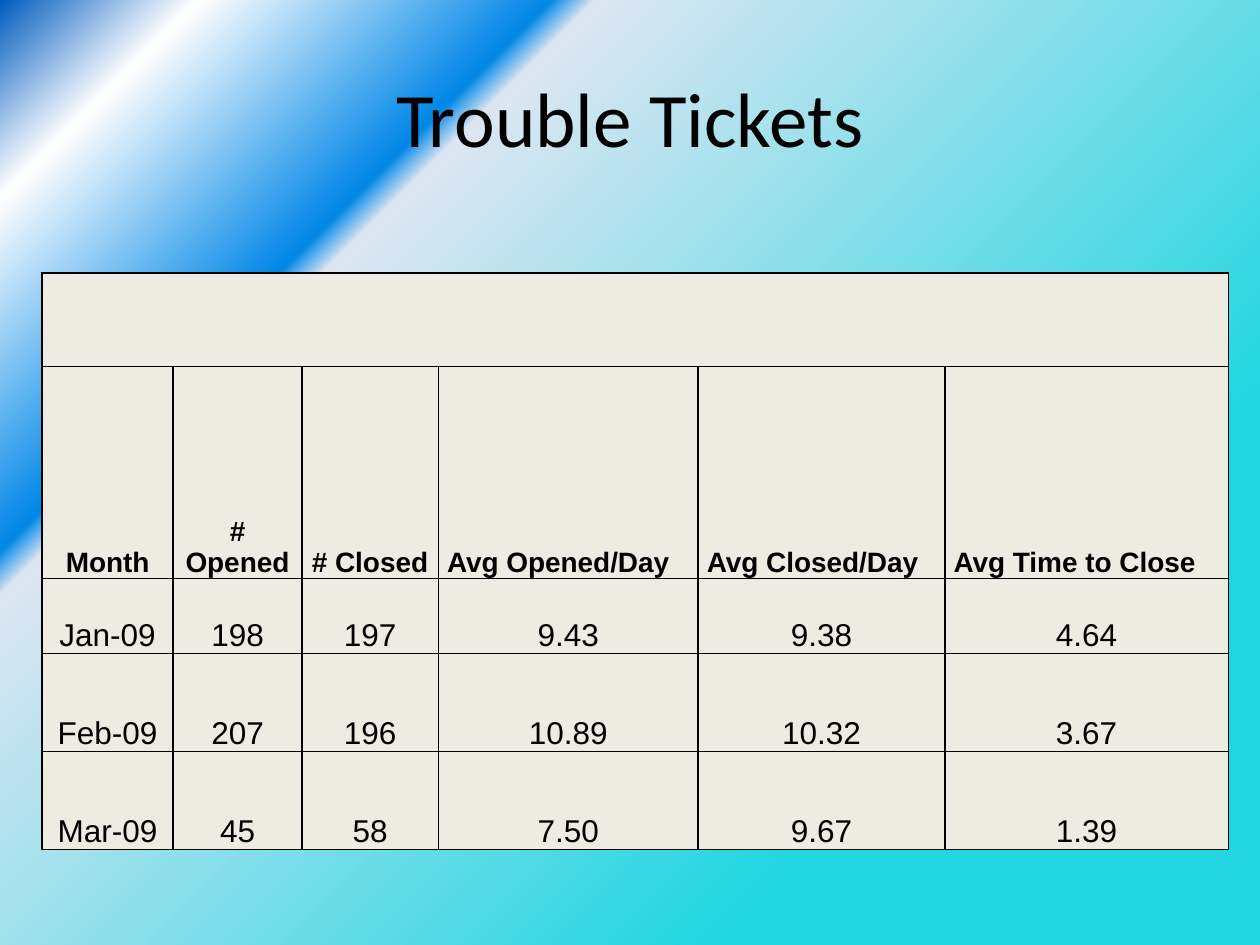
"""Build the Trouble Tickets slide with its monthly summary table."""
from lxml.etree import SubElement
from pptx import Presentation
from pptx.dml.color import RGBColor
from pptx.enum.text import MSO_ANCHOR, PP_ALIGN
from pptx.oxml.ns import qn
from pptx.util import Pt


def rgb(color):
    return RGBColor.from_string(color)


def write(tf, text, size=18, font="Arial", bold=False, align=PP_ALIGN.CENTER, color="000000"):
    p = tf.paragraphs[0]
    p.alignment = align
    r = p.add_run()
    r.text = text
    r.font.size = Pt(size)
    r.font.name = font
    r.font.bold = bold
    r.font.color.rgb = rgb(color)


prs = Presentation()
prs.slide_width, prs.slide_height = Pt(720), Pt(540)
s = prs.slides.add_slide(prs.slide_layouts[5])

s.background.fill.gradient()
grad = next(s.element.iter(qn("a:gradFill")))
for child in list(grad):
    grad.remove(child)
grad.set("rotWithShape", "1")
stops = [(25, "21D6E0"), (73, "DCE6F2"), (75, "0087E6"), (91, "FFFFFF"), (100, "005CBF")]
gs_list = SubElement(grad, qn("a:gsLst"))
for pos, color in stops:
    gs = SubElement(gs_list, qn("a:gs"), pos=str(pos * 1000))
    SubElement(gs, qn("a:srgbClr"), val=color)
path = SubElement(grad, qn("a:path"), path="circle")
SubElement(path, qn("a:fillToRect"), l="100000", t="100000")

title = s.shapes.title
title.left, title.top, title.width, title.height = Pt(36), Pt(21.6), Pt(648), Pt(90)
title.text_frame.vertical_anchor = MSO_ANCHOR.MIDDLE
write(title.text_frame, "Trouble Tickets", size=44, font="Calibri")

widths = [75, 73.5, 78, 148.5, 141, 162]
heights = [53.5, 121, 43, 56, 56]
rows = [
    ["Month", "# Opened", "# Closed", "Avg Opened/Day", "Avg Closed/Day", "Avg Time to Close"],
    ["Jan-09", "198", "197", "9.43", "9.38", "4.64"],
    ["Feb-09", "207", "196", "10.89", "10.32", "3.67"],
    ["Mar-09", "45", "58", "7.50", "9.67", "1.39"],
]
frame = s.shapes.add_table(len(heights), len(widths), Pt(24), Pt(156), Pt(sum(widths)), Pt(sum(heights)))
table = frame.table
table.first_row = table.horz_banding = False
for column, width in zip(table.columns, widths):
    column.width = Pt(width)
for row, height in zip(table.rows, heights):
    row.height = Pt(height)
table.cell(0, 0).merge(table.cell(0, len(widths) - 1))

for cell in table.iter_cells():
    cell.vertical_anchor = MSO_ANCHOR.BOTTOM
    cell.margin_left = cell.margin_right = Pt(5)
    cell.margin_top = cell.margin_bottom = 0
    tcPr = cell._tc.get_or_add_tcPr()
    for side in ("lnL", "lnR", "lnT", "lnB"):
        ln = SubElement(tcPr, qn(f"a:{side}"), w=str(Pt(1)))
        SubElement(SubElement(ln, qn("a:solidFill")), qn("a:srgbClr"), val="000000")
    cell.fill.solid()
    cell.fill.fore_color.rgb = rgb("EEECE1")

for i, row in enumerate(rows):
    header = i == 0
    for j, text in enumerate(row):
        align = PP_ALIGN.LEFT if header and j > 2 else PP_ALIGN.CENTER
        write(table.cell(i + 1, j).text_frame, text, size=16 if header else 18, bold=header, align=align)

prs.save("out.pptx")
